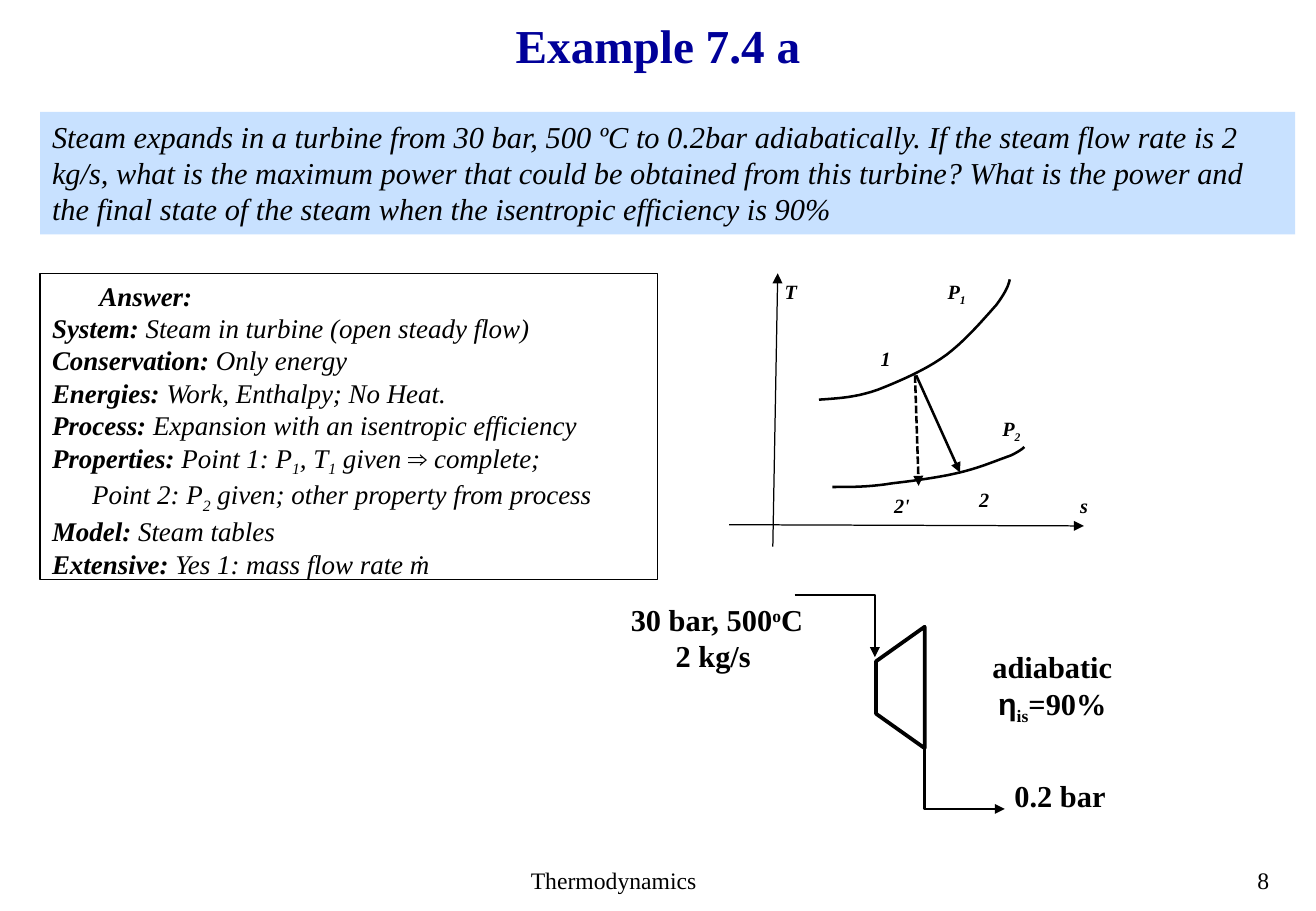
from lxml.etree import SubElement
from pptx import Presentation
from pptx.dml.color import RGBColor
from pptx.enum.dml import MSO_LINE
from pptx.enum.shapes import MSO_CONNECTOR, MSO_SHAPE
from pptx.enum.text import MSO_ANCHOR, PP_ALIGN
from pptx.oxml.ns import qn
from pptx.util import Pt

PX = 9144  # 100 px to the inch
BLACK = RGBColor(0, 0, 0)
NAVY = RGBColor(0, 0, 0x99)
PALE_BLUE = RGBColor(0xC8, 0xE1, 0xFF)
SERIF = "Times New Roman"
SUB = {"baseline": -25}
BOLD = {"bold": True}


def emu(*lengths):
    return [round(length * PX) for length in lengths]


def add_span(para, text, size=18, bold=False, italic=False, color=BLACK,
             font=SERIF, baseline=0):
    span = para.add_run()
    span.text = text
    span.font.size = Pt(size)
    span.font.bold = bold
    span.font.italic = italic
    span.font.name = font
    span.font.color.rgb = color
    if baseline:
        span.font._element.set("baseline", str(baseline * 1000))


def fill_text(frame, paras, align=PP_ALIGN.LEFT, anchor=MSO_ANCHOR.TOP,
              line_spacing=None, indents=None, **format):
    """Write paragraphs of (text, overrides) spans; indents maps index to px."""
    frame.word_wrap = True
    frame.vertical_anchor = anchor
    for index, spans in enumerate(paras):
        para = frame.add_paragraph() if index else frame.paragraphs[0]
        para.alignment = align
        if line_spacing:
            para.line_spacing = line_spacing
        if indents and index in indents:
            properties = para._p.get_or_add_pPr()
            properties.set("marL", str(indents[index] * PX))
            properties.set("indent", "0")
        for text, overrides in spans:
            add_span(para, text, **{**format, **overrides})


def add_text(page, box, paras, **format):
    fill_text(page.shapes.add_textbox(*emu(*box)).text_frame, paras, **format)


def add_panel(page, box, paras, fill=None, outline=None, **format):
    panel = page.shapes.add_shape(MSO_SHAPE.RECTANGLE, *emu(*box))
    panel.shadow.inherit = False
    if fill is None:
        panel.fill.background()
    else:
        panel.fill.solid()
        panel.fill.fore_color.rgb = fill
    if outline is None:
        panel.line.fill.background()
    else:
        panel.line.color.rgb = outline
        panel.line.width = Pt(0.75)
    fill_text(panel.text_frame, paras, **format)


def style_line(line, width, arrow=None):
    """Make a black line; arrow is headEnd or tailEnd."""
    line.color.rgb = BLACK
    line.width = Pt(width)
    if arrow:
        SubElement(line._get_or_add_ln(), qn(f"a:{arrow}"), type="triangle")


def add_arrow(page, start, end, width, dash=None):
    arrow = page.shapes.add_connector(MSO_CONNECTOR.STRAIGHT, *emu(*start, *end))
    SubElement(arrow._element.spPr, qn("a:effectLst"))
    if dash:
        arrow.line.dash_style = dash
    style_line(arrow.line, width, "tailEnd")


def add_path(page, points, arrow=None):
    corners = [emu(*point) for point in points]
    builder = page.shapes.build_freeform(*corners[0])
    builder.add_line_segments(corners[1:], close=False)
    outline = builder.convert_to_shape()
    outline.shadow.inherit = False
    outline.fill.background()
    style_line(outline.line, 1.5, arrow)


def curve_points(knots, steps=10):
    """Sample a chain of cubic Bezier curves."""
    points = [knots[0]]
    for first in range(0, len(knots) - 1, 3):
        for step in range(1, steps + 1):
            t = step / steps
            weights = ((1 - t) ** 3, 3 * t * (1 - t) ** 2, 3 * t * t * (1 - t), t ** 3)
            points.append(tuple(
                sum(w * knot[axis] for w, knot in zip(weights, knots[first:first + 4]))
                for axis in (0, 1)))
    return points


def draw_heading(page, box):
    add_text(page, box, [[("Example 7.4 a", BOLD)]], size=28, color=NAVY,
             align=PP_ALIGN.CENTER, anchor=MSO_ANCHOR.MIDDLE, line_spacing=0.9)


def draw_question(page, box):
    question = (
        "Steam expands in a turbine from 30 bar, 500 ºC to 0.2bar adiabatically. "
        "If the steam flow rate is 2 kg/s, what is the maximum power that could be "
        "obtained from this turbine? What is the power and the final state of the "
        "steam when the isentropic efficiency is 90%")
    add_panel(page, box, [[(question, {})]], fill=PALE_BLUE, italic=True)


def draw_answer(page, box):
    paras = [
        [("Answer:", BOLD)],
        [("System: ", BOLD), ("Steam in turbine (open steady flow)", {})],
        [("Conservation: ", BOLD), ("Only energy", {})],
        [("Energies: ", BOLD), ("Work, Enthalpy; No Heat.", {})],
        [("Process: ", BOLD), ("Expansion with an isentropic efficiency", {})],
        [("Properties: ", BOLD), ("Point 1: P", {}), ("1", SUB), (", T", {}),
         ("1", SUB), (" given ⇒ complete;", {})],
        [("Point 2: P", {}), ("2", SUB),
         (" given; other property from process", {})],
        [("Model: ", BOLD), ("Steam tables", {})],
        [("Extensive:", BOLD), (" Yes 1: mass flow rate ṁ", {})],
    ]
    add_panel(page, box, paras, outline=BLACK, size=16, italic=True,
              indents={0: 39, 6: 33})


def draw_ts_diagram(page, left, top):
    def at(x, y):
        return left + x, top + y

    add_arrow(page, at(0, 207), at(292, 208), 0.75)
    add_arrow(page, at(36, 225), at(40, 0), 0.75)
    add_arrow(page, at(153, 84), at(156, 175), 1.5, MSO_LINE.SQUARE_DOT)
    add_arrow(page, at(154, 84), at(190, 164), 1.5)

    isobars = [
        [(74, 104), (90, 103), (105, 102), (122, 96), (140, 89), (163, 79), (179, 67),
         (195, 55), (211, 36), (220, 26), (228, 15), (230, 10), (231, 5)],
        [(85, 176), (101, 176), (116, 176), (134, 173), (151, 171), (174, 168),
         (190, 164), (207, 160), (223, 153), (232, 150), (240, 146), (242, 144),
         (243, 143)],
    ]
    for knots in isobars:
        add_path(page, [at(*point) for point in curve_points(knots)])

    labels = [(36, 0, "T", ""), (279, 176, "s", ""), (115, 55, "1", ""),
              (126, 176, "2'", ""), (196, 171, "2", ""), (215, 113, "P", "2"),
              (170, 0, "P", "1")]
    for x, y, letter, index in labels:
        spans = [(letter, {})] + ([(index, SUB)] if index else [])
        add_text(page, (*at(x, y), 50, 30), [spans], size=12, bold=True, italic=True)


def draw_turbine(page, left, top):
    def at(x, y):
        return left + x, top + y

    turbine = page.shapes.add_shape(MSO_SHAPE.TRAPEZOID, *emu(*at(197, 56), 100, 40))
    turbine.rotation = 270
    turbine.adjustments[0] = 0.71
    turbine.shadow.inherit = False
    turbine.fill.background()
    style_line(turbine.line, 2.25)

    add_path(page, [at(160, 0), at(226, 0), at(226, 51)], "tailEnd")
    add_path(page, [at(333, 176), at(267, 176), at(267, 125)], "headEnd")

    add_text(page, (*at(0, 0), 192, 71),
             [[("30 bar, 500", {}), ("o", {"baseline": 30}), ("C", {})],
              [("2 kg/s ", {})]], bold=True, align=PP_ALIGN.CENTER)
    add_text(page, (*at(331, 145), 192, 40), [[("0.2 bar", {})]], bold=True)
    add_text(page, (*at(276, 39), 192, 71),
             [[("adiabatic", {})],
              [("η", {"font": "Arial"}), ("is", SUB), ("=90%", {})]],
             bold=True, align=PP_ALIGN.CENTER)


def draw_footer(page, top):
    for left, width, text in ((427, 170, "Thermodynamics"), (1025, 43, "8")):
        add_text(page, (left, top, width, 34), [[(text, {})]], size=14)


def main():
    deck = Presentation()
    deck.slide_width, deck.slide_height = emu(1083, 750)
    page = deck.slides.add_slide(deck.slide_layouts[6])
    draw_footer(page, 708)
    draw_heading(page, (413, 14, 257, 52))
    draw_question(page, (33, 92, 1033, 101))
    draw_answer(page, (33, 225, 508, 252))
    draw_ts_diagram(page, 600, 225)
    draw_turbine(page, 494, 490)
    deck.save("out.pptx")


if __name__ == "__main__":
    main()
